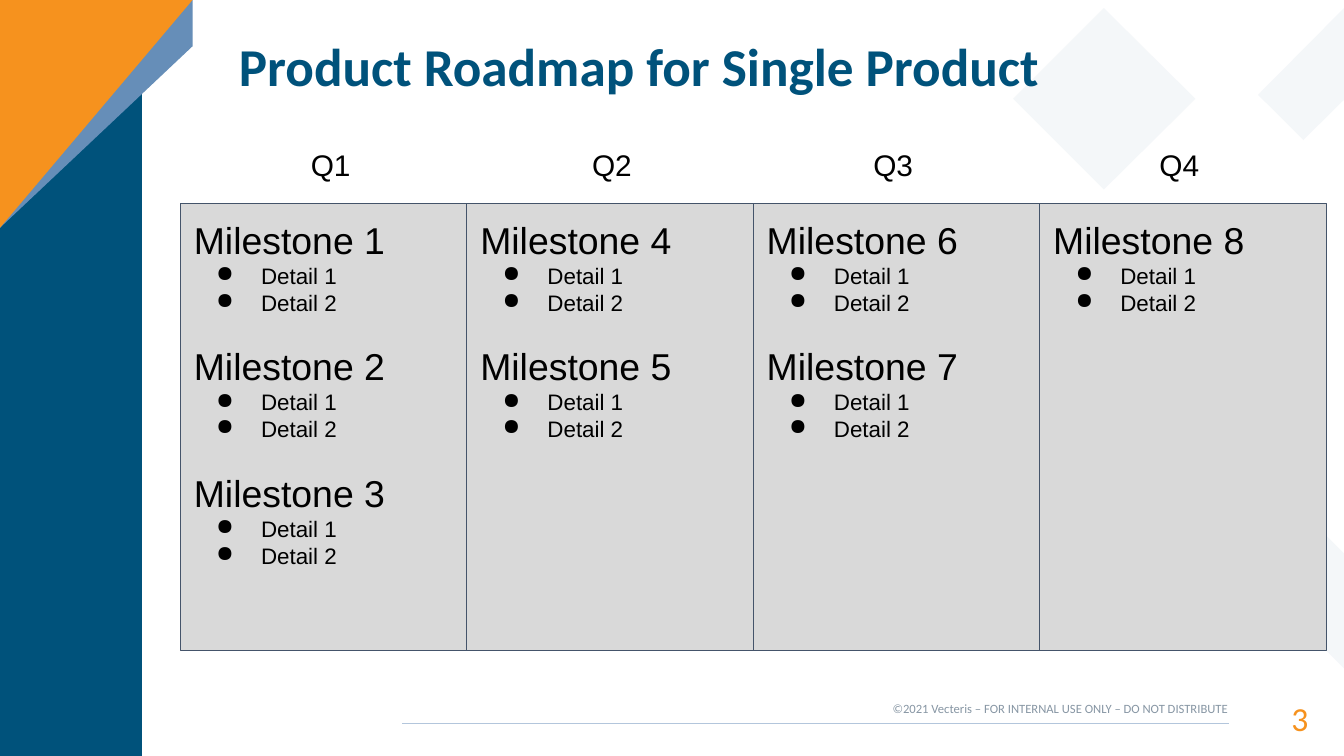
import pptx
import pptx.dml.color
import pptx.enum.shapes
import pptx.enum.text
import pptx.oxml
import pptx.oxml.ns
import pptx.util
from lxml import etree

Pt = pptx.util.Pt
RGBColor = pptx.dml.color.RGBColor
ALIGN = pptx.enum.text.PP_ALIGN
ANCHOR = pptx.enum.text.MSO_ANCHOR

NAVY = RGBColor(0x00, 0x52, 0x7B)
STEEL = RGBColor(0x66, 0x8E, 0xB8)
ORANGE = RGBColor(0xF6, 0x92, 0x1E)
PALE = RGBColor(0xE9, 0xEE, 0xF4)
RULE = RGBColor(0xB3, 0xC6, 0xDC)
MUTED = RGBColor(0x87, 0x96, 0xA4)
PANEL = RGBColor(0xD9, 0xD9, 0xD9)
PANEL_EDGE = RGBColor(0x44, 0x54, 0x6A)
BLACK = RGBColor(0, 0, 0)

QUARTERS = [
    ("Q1", 212.4, ["Milestone 1", "Milestone 2", "Milestone 3"]),
    ("Q2", 413.3, ["Milestone 4", "Milestone 5"]),
    ("Q3", 614.2, ["Milestone 6", "Milestone 7"]),
    ("Q4", 818.6, ["Milestone 8"]),
]
DETAILS = ["Detail 1", "Detail 2"]
PANEL_LEFT, PANEL_TOP, PANEL_WIDTH, PANEL_HEIGHT = 128.9, 145.4, 204.6, 319
INSET = 9.6


def qn(tag):
    return pptx.oxml.ns.qn(tag)


class Deck:
    heading_font = "Calibri"
    body_font = "Arial"

    def __init__(self, slide):
        self.slide = slide

    def style(self, paragraph, font, size, color, bold=False):
        paragraph.font.name = font
        paragraph.font.size = Pt(size)
        paragraph.font.color.rgb = color
        paragraph.font.bold = bold

    def frame(self, shape, inset, anchor, wrap=True):
        frame = shape.text_frame
        frame.margin_left = frame.margin_right = Pt(inset)
        frame.margin_top = frame.margin_bottom = Pt(inset)
        frame.vertical_anchor = anchor
        frame.word_wrap = wrap
        return frame

    def title(self, text, left, top, width, height):
        title = self.slide.shapes.title
        title.left, title.top, title.width, title.height = map(
            Pt, (left, top, width, height))
        frame = self.frame(title, 0, ANCHOR.MIDDLE)
        frame.auto_size = pptx.enum.text.MSO_AUTO_SIZE.NONE
        frame.text = text
        line = frame.paragraphs[0]
        line.alignment = ALIGN.LEFT
        line.line_spacing = 0.9
        self.style(line, self.heading_font, 38, NAVY, bold=True)
        # Bring the title in front of the decoration
        title.element.getparent().append(title.element)

    def polygon(self, points, color, opacity=None):
        start, *rest = [(Pt(x), Pt(y)) for x, y in points]
        builder = self.slide.shapes.build_freeform(*start)
        builder.add_line_segments(rest, close=True)
        shape = builder.convert_to_shape()
        shape.shadow.inherit = False
        shape.fill.solid()
        shape.fill.fore_color.rgb = color
        shape.line.fill.background()
        if opacity is not None:
            tint = shape.element.spPr.find(".//" + qn("a:srgbClr"))
            etree.SubElement(tint, qn("a:alpha"), val=str(opacity * 1000))

    def rule(self, left, right, y):
        rule = self.slide.shapes.add_connector(
            pptx.enum.shapes.MSO_CONNECTOR.STRAIGHT, Pt(left), Pt(y), Pt(right), Pt(y))
        rule.line.color.rgb = RULE
        rule.line.width = Pt(0.82)
        etree.SubElement(rule.element.spPr, qn("a:effectLst"))

    def label(self, text, box, font, size, color, align=ALIGN.LEFT,
              anchor=ANCHOR.TOP, inset=0, wrap=True, spacing=1.0):
        label = self.slide.shapes.add_textbox(*map(Pt, box))
        frame = self.frame(label, inset, anchor, wrap)
        frame.text = text
        line = frame.paragraphs[0]
        line.alignment = align
        line.line_spacing = spacing
        self.style(line, font, size, color)

    def bullet(self, paragraph):
        properties = paragraph._p.get_or_add_pPr()
        properties.set("marL", str(Pt(48)))
        properties.set("indent", str(Pt(-32)))
        tint = etree.SubElement(properties, qn("a:buClr"))
        etree.SubElement(tint, qn("a:srgbClr"), val=str(BLACK))
        etree.SubElement(properties, qn("a:buChar"), char="●")

    def milestones(self, names, left):
        panel = self.slide.shapes.add_shape(
            pptx.enum.shapes.MSO_SHAPE.RECTANGLE,
            Pt(left), Pt(PANEL_TOP), Pt(PANEL_WIDTH), Pt(PANEL_HEIGHT))
        panel.shadow.inherit = False
        panel.fill.solid()
        panel.fill.fore_color.rgb = PANEL
        panel.line.color.rgb = PANEL_EDGE
        panel.line.width = Pt(0.75)
        frame = self.frame(panel, INSET, ANCHOR.TOP)
        for index, name in enumerate(names):
            heading = frame.add_paragraph() if index else frame.paragraphs[0]
            heading.text = name
            heading.alignment = ALIGN.LEFT
            if index:
                heading.space_before = Pt(20)
            self.style(heading, self.body_font, 26.7, BLACK)
            for detail in DETAILS:
                item = frame.add_paragraph()
                item.text = detail
                item.alignment = ALIGN.LEFT
                self.bullet(item)
                self.style(item, self.body_font, 16, BLACK)


def main():
    presentation = pptx.Presentation()
    presentation.slide_width, presentation.slide_height = Pt(960), Pt(540)
    slide = presentation.slides.add_slide(presentation.slide_layouts.get_by_name("Title Only"))
    deck = Deck(slide)

    # Pale background decoration
    deck.polygon([(788.5, 5.8), (723.6, 70.6), (788.5, 135.4), (853.9, 70.6)], PALE, 47)
    deck.polygon([(792, 172.8), (723.6, 241.2), (960, 477.4), (960, 395.3),
                  (806.4, 241.2), (833, 213.8)], PALE, 47)
    deck.polygon([(960, 5.8), (898.6, 67.7), (931, 100), (960, 71.3)], PALE, 47)

    # Left band and folded corner
    deck.polygon([(0, 0), (101.5, 0), (101.5, 540), (0, 540)], NAVY)
    deck.polygon([(137.5, 0), (0, 0), (0, 162.7), (137.5, 33.1)], STEEL)
    deck.polygon([(137.5, 0), (0, 0), (0, 162.7)], ORANGE)

    deck.title("Product Roadmap for Single Product", 170.6, 25.2, 689.8, 49)

    for index, (quarter, label_left, names) in enumerate(QUARTERS):
        deck.label(quarter, (label_left, 95, 52.6, 30.2), deck.body_font, 21.3, BLACK,
                   inset=INSET, wrap=False)
        deck.milestones(names, PANEL_LEFT + index * PANEL_WIDTH)

    deck.rule(287.3, 877.7, 517)
    deck.label("©2021 Vecteris – FOR INTERNAL USE ONLY – DO NOT DISTRIBUTE",
               (570.2, 500.4, 306.7, 10.8), deck.heading_font, 9, MUTED, ALIGN.RIGHT)
    deck.label("3", (877, 496.8, 57.6, 27.4), deck.heading_font, 24, ORANGE,
               ALIGN.RIGHT, ANCHOR.MIDDLE, spacing=1.19)
    presentation.save("out.pptx")


if __name__ == "__main__":
    main()
